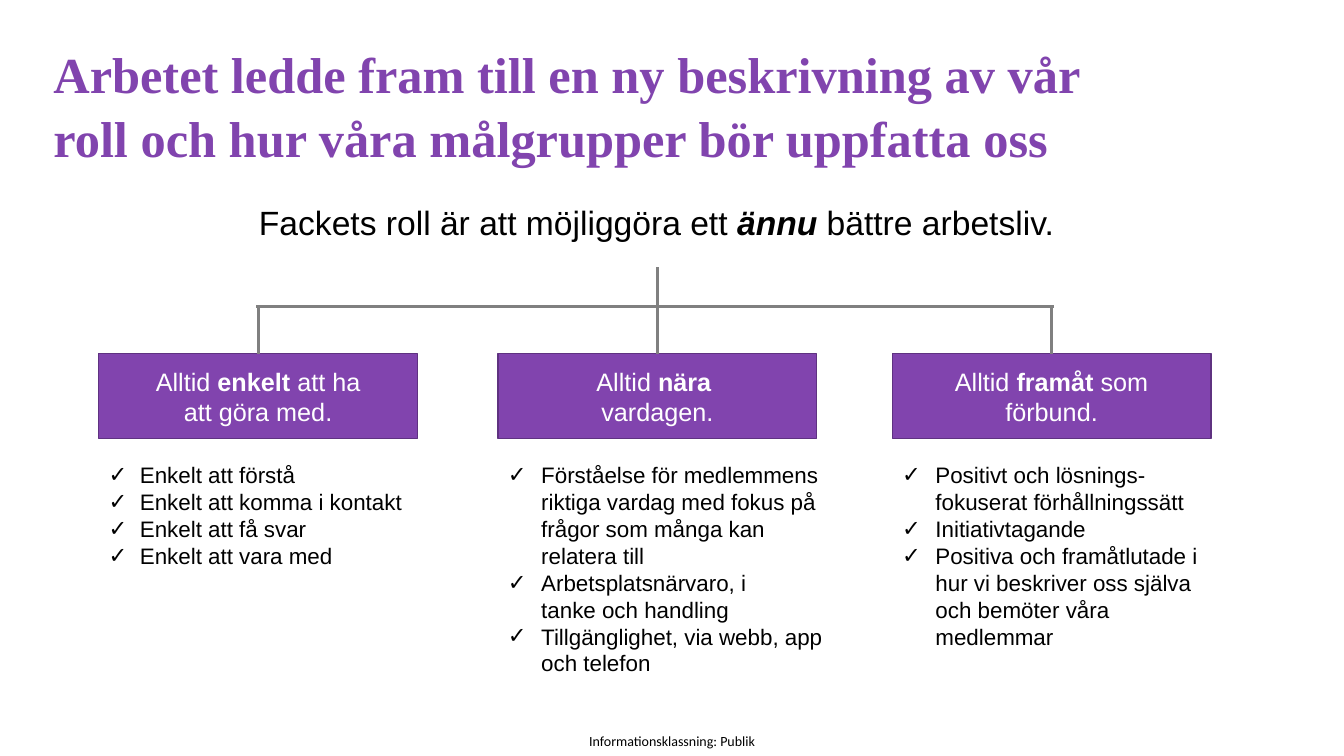
from dataclasses import dataclass

from lxml import etree
from pptx import Presentation
from pptx.dml.color import RGBColor
from pptx.enum.shapes import MSO_CONNECTOR, MSO_SHAPE
from pptx.enum.text import MSO_ANCHOR, PP_ALIGN
from pptx.oxml.ns import qn
from pptx.util import Pt

STRAIGHT = MSO_CONNECTOR.STRAIGHT
RECTANGLE = MSO_SHAPE.RECTANGLE
TOP, MIDDLE = MSO_ANCHOR.TOP, MSO_ANCHOR.MIDDLE
LEFT, CENTER = PP_ALIGN.LEFT, PP_ALIGN.CENTER

TITLE = [("Arbetet ledde fram till en ny beskrivning av vår "
          "roll och hur våra målgrupper bör uppfatta oss", "b")]
ROLE = [("Fackets roll är att möjliggöra ett ", ""), ("ännu", "bi"),
        (" bättre arbetsliv.", "")]
FOOTER = [("Informationsklassning: Publik", "")]
PILLARS = [
    {"left": 98, "list_width": 316, "indent": 31,
     "promise": [("Alltid ", ""), ("enkelt", "b"), (" att ha\natt göra med.", "")],
     "points": ["Enkelt att förstå", "Enkelt att komma i kontakt",
                "Enkelt att få svar", "Enkelt att vara med"]},
    {"left": 494, "list_width": 344, "indent": 33,
     "promise": [("Alltid ", ""), ("nära \n", "b"), ("vardagen.", "")],
     "points": ["Förståelse för medlemmens riktiga vardag med fokus på "
                "frågor som många kan relatera till",
                "Arbetsplatsnärvaro, i\ntanke och handling",
                "Tillgänglighet, via webb, app och telefon"]},
    {"left": 885, "list_width": 316, "indent": 33,
     "promise": [("Alltid ", ""), ("framåt", "b"), (" som\nförbund.", "")],
     "points": ["Positivt och lösnings-fokuserat förhållningssätt",
                "Initiativtagande",
                "Positiva och framåtlutade i hur vi beskriver oss själva "
                "och bemöter våra medlemmar"]},
]


@dataclass(frozen=True)
class Style:
    font: str
    size: int
    color: str
    bold: bool = False


@dataclass(frozen=True)
class Theme:
    purple: str = "8144AE"
    purple_edge: str = "5F3281"
    branch: str = "808080"
    branch_width: float = 2.25
    title: Style = Style("Times New Roman", 36, "8144AE", True)
    role: Style = Style("Arial", 24, "000000")
    promise: Style = Style("Arial", 18, "FFFFFF")
    point: Style = Style("Arial", 16, "000000")
    footer: Style = Style("Calibri", 10, "000000")


THEME = Theme()
PX = 9144
CARD_TOP, CARD_WIDTH, CARD_HEIGHT = 351, 316, 84
LIST_TOP, LIST_HEIGHT = 453, 226
TRUNK_TOP, BRANCH_Y, CORNER = 265, 304, 2


def px(*lengths):
    return [length * PX for length in lengths]


def add_runs(paragraph, runs, style):
    for text, emphasis in runs:
        for number, line in enumerate(text.split("\n")):
            if number:
                paragraph.add_line_break()
            if not line:
                continue
            run = paragraph.add_run()
            run.text = line
            run.font.name = style.font
            run.font.size = Pt(style.size)
            run.font.color.rgb = RGBColor.from_string(style.color)
            run.font.bold = style.bold or "b" in emphasis
            run.font.italic = "i" in emphasis


def add_text(slide, box, runs, style, align=LEFT, anchor=TOP, inset=10, wrap=True):
    frame = slide.shapes.add_textbox(*px(*box)).text_frame
    frame.word_wrap = wrap
    frame.vertical_anchor = anchor
    frame.margin_left = frame.margin_right = inset * PX
    frame.margin_top = frame.margin_bottom = inset // 2 * PX
    paragraph = frame.paragraphs[0]
    paragraph.alignment = align
    add_runs(paragraph, runs, style)
    return frame


def add_card(slide, pillar):
    card = slide.shapes.add_shape(
        RECTANGLE, *px(pillar["left"], CARD_TOP, CARD_WIDTH, CARD_HEIGHT))
    card.shadow.inherit = False
    card.fill.solid()
    card.fill.fore_color.rgb = RGBColor.from_string(THEME.purple)
    card.line.color.rgb = RGBColor.from_string(THEME.purple_edge)
    card.line.width = Pt(1)
    card.text_frame.word_wrap = True
    card.text_frame.vertical_anchor = MIDDLE
    paragraph = card.text_frame.paragraphs[0]
    paragraph.alignment = CENTER
    add_runs(paragraph, pillar["promise"], THEME.promise)
    return card


def add_points(slide, pillar):
    box = (pillar["left"], LIST_TOP, pillar["list_width"], LIST_HEIGHT)
    frame = add_text(slide, box, [], THEME.point)
    for number, point in enumerate(pillar["points"]):
        paragraph = frame.add_paragraph() if number else frame.paragraphs[0]
        properties = paragraph._p.get_or_add_pPr()
        indent = pillar["indent"] * PX
        properties.set("marL", str(indent))
        properties.set("indent", str(-indent))
        etree.SubElement(properties, qn("a:buFont")).set("typeface", "Arial")
        etree.SubElement(properties, qn("a:buChar")).set("char", "✓")
        add_runs(paragraph, [(point, "")], THEME.point)


def add_branch(slide, start, end):
    branch = slide.shapes.add_connector(STRAIGHT, *px(*start, *end))
    branch.line.color.rgb = RGBColor.from_string(THEME.branch)
    branch.line.width = Pt(THEME.branch_width)
    etree.SubElement(branch._element.spPr, qn("a:effectLst"))
    return branch


def main():
    deck = Presentation()
    deck.slide_width, deck.slide_height = px(1333, 750)
    slide = deck.slides.add_slide(deck.slide_layouts[6])

    add_text(slide, (567, 721, 199, 29), FOOTER, THEME.footer, CENTER, MIDDLE, 0)
    title = add_text(slide, (53, 40, 1063, 142), TITLE, THEME.title, inset=0)
    title.paragraphs[0].line_spacing = 1.05
    add_text(slide, (247, 195, 811, 50), ROLE, THEME.role, wrap=False)

    centers = [pillar["left"] + CARD_WIDTH // 2 for pillar in PILLARS]
    add_branch(slide, (centers[1], TRUNK_TOP), (centers[1], BRANCH_Y))
    add_branch(slide, (centers[0] - CORNER, BRANCH_Y), (centers[-1] + CORNER, BRANCH_Y))
    for pillar, center in zip(PILLARS, centers):
        card = add_card(slide, pillar)
        add_points(slide, pillar)
        stem = add_branch(slide, (center, BRANCH_Y), (center, CARD_TOP))
        stem.end_connect(card, 0)

    deck.save("out.pptx")


if __name__ == "__main__":
    main()
